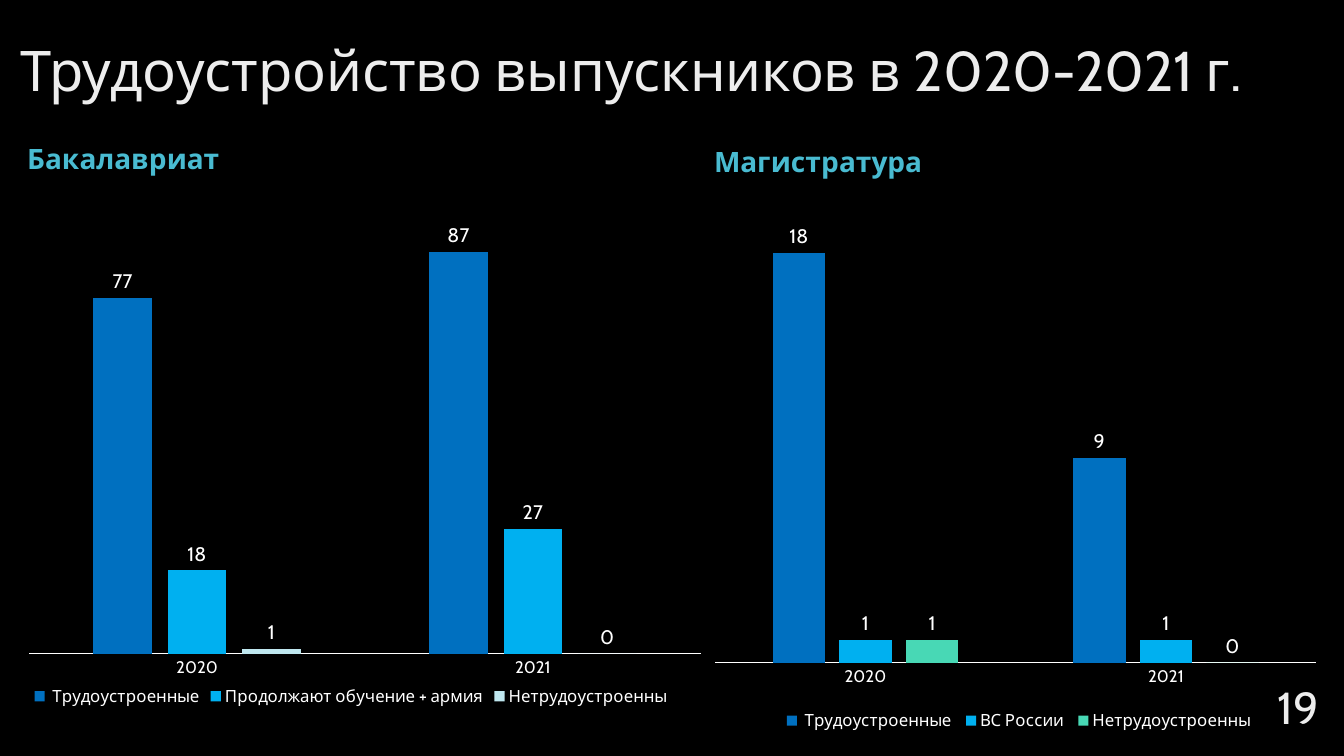
from lxml import etree
from pptx import Presentation
from pptx import util as u
from pptx.chart.data import CategoryChartData
from pptx.dml.color import RGBColor
from pptx.enum import chart as ch, text
from pptx.oxml import ns, parse_xml

FONT = "Cabin"
HEX = {
    "back": "000000", "text": "FFFFFF", "head": "49BBD1",
    "blue": "0070C0", "sky": "00B0F0", "pale": "BFE7EF", "mint": "48D8B5",
    "gray": "BFBFBF", "dim": "9E9E9E", "soft": "EDEDED",
}
YEARS = ["2020", "2021"]


def rgb(name):
    return RGBColor.from_string(HEX[name])


def style(font, size, color="text", bold=False):
    font.name = FONT
    font.size = u.Pt(size)
    font.bold = bold
    font.color.rgb = rgb(color)


def shade(font, start, angle):
    """Fill the letters with a gradient that runs from start to white."""
    font.fill.gradient()
    font.fill.gradient_angle = angle
    stops = font.fill._fill._gradFill.find(ns.qn("a:gsLst"))
    for stop in list(stops):
        stops.remove(stop)
    for pos, name in ((0, start), (28, "soft"), (100, "text")):
        stops.append(parse_xml(
            f'<a:gs {ns.nsdecls("a")} pos="{pos * 1000}">'
            f'<a:srgbClr val="{HEX[name]}"/></a:gs>'))


def add_text(slide, words, box, size, start, angle, align):
    frame = slide.shapes.add_textbox(*map(u.Inches, box)).text_frame
    frame.word_wrap = True
    frame.vertical_anchor = text.MSO_ANCHOR.MIDDLE
    frame.text = words
    para = frame.paragraphs[0]
    para.alignment = align
    para.line_spacing = 0.9
    font = para.runs[0].font
    font.name = FONT
    font.size = u.Pt(size)
    shade(font, start, angle)


def place(part, inner=False, **sides):
    """Set a chart part's layout in fractions of the chart."""
    old = part.find(ns.qn("c:layout"))
    if old is not None:
        part.remove(old)
    layout = etree.Element(ns.qn("c:layout"))
    manual = etree.SubElement(layout, ns.qn("c:manualLayout"))
    items = {"layoutTarget": "inner"} if inner else {}
    items.update(xMode="edge", yMode="edge", **sides)
    for tag, value in items.items():
        etree.SubElement(manual, ns.qn("c:" + tag)).set("val", str(value))
    spot = 0
    for tag in ("c:tx", "c:legendPos"):
        before = part.find(ns.qn(tag))
        if before is not None:
            spot = part.index(before) + 1
    part.insert(spot, layout)


def add_bars(slide, title, box, series, head, plot, key):
    data = CategoryChartData()
    data.categories = YEARS
    for name, values, _ in series:
        data.add_series(name, values)
    chart = slide.shapes.add_chart(
        ch.XL_CHART_TYPE.COLUMN_CLUSTERED, *map(u.Inches, box), data).chart
    style(chart.font, 10)

    chart.has_title = True
    frame = chart.chart_title.text_frame
    frame.text = title
    style(frame.paragraphs[0].runs[0].font, 20, "head", True)
    chart.chart_title.include_in_layout = False
    place(chart.chart_title._element, **head)

    chart.has_legend = True
    chart.legend.position = ch.XL_LEGEND_POSITION.BOTTOM
    chart.legend.include_in_layout = False
    style(chart.legend.font, 12)
    place(chart.legend._element, **key)

    axis = chart.category_axis
    axis.major_tick_mark = ch.XL_TICK_MARK.NONE
    axis.format.line.color.rgb = rgb("text")
    axis.format.line.width = u.Pt(0.75)
    style(axis.tick_labels.font, 12)
    chart.value_axis.visible = False
    chart.value_axis.has_major_gridlines = False
    chart.value_axis.minimum_scale = 0

    bars = chart.plots[0]
    bars.gap_width = 219
    bars.overlap = -27
    bars.vary_by_categories = False
    for bar, (_, _, color) in zip(bars.series, series):
        bar.format.fill.solid()
        bar.format.fill.fore_color.rgb = rgb(color)
        labels = bar.data_labels
        labels.show_value = True
        labels.position = ch.XL_LABEL_POSITION.OUTSIDE_END
        style(labels.font, 14)
    place(chart._chartSpace.chart.plotArea, True, **plot)


def main():
    deck = Presentation()
    deck.slide_width = u.Inches(13.33)
    deck.slide_height = u.Inches(7.5)
    slide = deck.slides.add_slide(deck.slide_layouts[6])
    slide.background.fill.solid()
    slide.background.fill.fore_color.rgb = rgb("back")

    add_text(slide, "Трудоустройство выпускников в 2020-2021 г.",
             (0.11, 0.09, 13.07, 1.27), 40, "gray", 280, text.PP_ALIGN.LEFT)
    add_bars(slide, "Бакалавриат", (0.15, 1.27, 6.94, 6.03),
             [(" Трудоустроенные", (77, 87), "blue"),
              ("Продолжают обучение + армия", (18, 27), "sky"),
              ("Нетрудоустроенны", (1, 0), "pale")],
             head=dict(x=0.01, y=0.01),
             plot=dict(x=0.02, y=0.105, w=0.96, h=0.76),
             key=dict(x=0.02, y=0.91, w=0.92, h=0.05))
    add_bars(slide, "Магистратура", (6.97, 1.27, 6.21, 6.03),
             [(" Трудоустроенные", (18, 9), "blue"),
              ("ВС России", (1, 1), "sky"),
              ("Нетрудоустроенны", (1, 0), "mint")],
             head=dict(x=0.01, y=0.015),
             plot=dict(x=0.02, y=0.13, w=0.96, h=0.75),
             key=dict(x=0.12, y=0.95, w=0.77, h=0.05))
    add_text(slide, "19", (12.42, 6.74, 0.76, 0.61), 32, "dim", 270,
             text.PP_ALIGN.RIGHT)
    deck.save("out.pptx")


if __name__ == "__main__":
    main()
